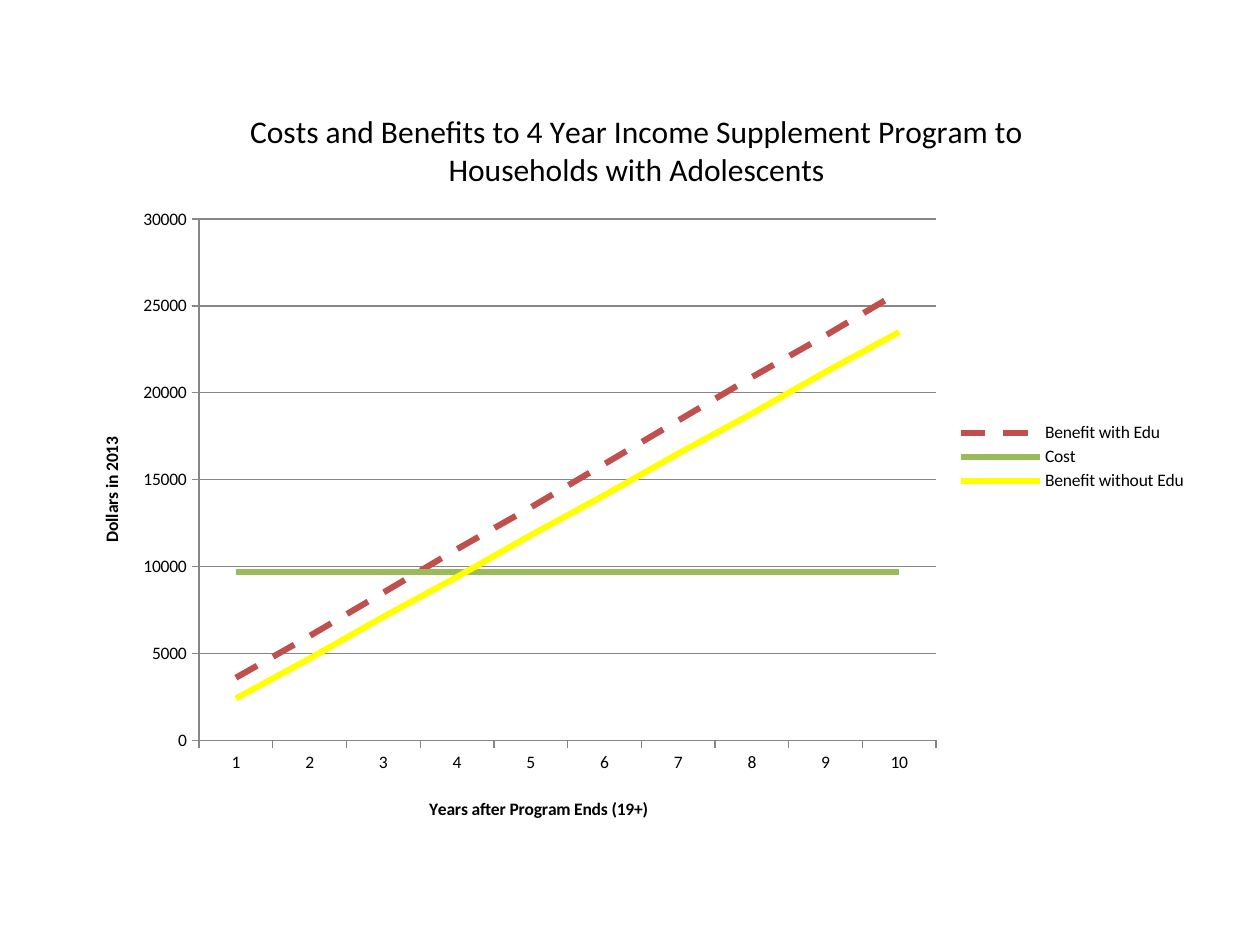
from lxml import etree
from pptx import Presentation
from pptx.chart.data import CategoryChartData
from pptx.dml.color import RGBColor
from pptx.enum.chart import XL_CHART_TYPE, XL_LEGEND_POSITION, XL_TICK_MARK
from pptx.enum.dml import MSO_LINE
from pptx.oxml.ns import qn
from pptx.util import Pt

LINE_CHART = XL_CHART_TYPE.LINE
LEGEND_RIGHT = XL_LEGEND_POSITION.RIGHT
TICK_OUTSIDE = XL_TICK_MARK.OUTSIDE
TICK_NONE = XL_TICK_MARK.NONE
DASH = MSO_LINE.DASH

FONT = "Calibri"
TITLE = "Costs and Benefits to 4 Year Income Supplement Program to Households with Adolescents"
CATEGORY_TITLE = "Years after Program Ends (19+)"
VALUE_TITLE = "Dollars in 2013"
YEARS = [str(year) for year in range(1, 11)]
SERIES = [
    ("Benefit with Edu", "C0504D", DASH,
     [3600, 6000, 8500, 11000, 13400, 15900, 18400, 20900, 23300, 25800]),
    ("Cost", "9BBB59", None, [9700] * len(YEARS)),
    ("Benefit without Edu", "FFFF00", None,
     [2400, 4700, 7100, 9400, 11800, 14100, 16500, 18800, 21200, 23500]),
]


def color(hex_value):
    return RGBColor.from_string(hex_value)


def format_font(font, size, bold=False):
    font.name = FONT
    font.size = Pt(size)
    font.bold = bold
    font.color.rgb = color("000000")


def format_line(line, hex_value, width):
    line.color.rgb = color(hex_value)
    line.width = Pt(width)


def set_title(owner, text, size, bold):
    frame = (owner.chart_title if hasattr(owner, "chart_title") else owner.axis_title).text_frame
    frame.text = text
    format_font(frame.paragraphs[0].font, size, bold)


def place(element, following, left, top, width=None, height=None, inner=False):
    for old in element.findall(qn("c:layout")):
        element.remove(old)
    layout = etree.Element(qn("c:layout"))
    manual = etree.SubElement(layout, qn("c:manualLayout"))
    settings = [("layoutTarget", "inner")] if inner else []
    settings += [("xMode", "edge"), ("yMode", "edge"), ("x", left), ("y", top)]
    if width:
        settings += [("w", width), ("h", height)]
    for name, value in settings:
        etree.SubElement(manual, qn("c:" + name)).set("val", str(value))
    next(child for child in element if child.tag in map(qn, following)).addprevious(layout)


presentation = Presentation()
presentation.slide_width = Pt(720)
presentation.slide_height = Pt(540)
slide = presentation.slides.add_slide(presentation.slide_layouts[6])

chart_data = CategoryChartData()
chart_data.categories = YEARS
for name, _, _, values in SERIES:
    chart_data.add_series(name, values)
chart = slide.shapes.add_chart(LINE_CHART, Pt(36), Pt(42), Pt(648), Pt(438), chart_data).chart
format_font(chart.font, 10)
chart.plots[0].vary_by_categories = False

for series, (_, hex_value, dash, _) in zip(chart.plots[0].series, SERIES):
    series.smooth = False
    format_line(series.format.line, hex_value, 3.5)
    if dash:
        series.format.line.dash_style = dash

set_title(chart, TITLE, 18, False)
for axis, text in ((chart.category_axis, CATEGORY_TITLE), (chart.value_axis, VALUE_TITLE)):
    set_title(axis, text, 10, True)
    axis.major_tick_mark = TICK_OUTSIDE
    axis.minor_tick_mark = TICK_NONE
    format_line(axis.format.line, "868686", 0.75)

value_axis = chart.value_axis
value_axis.minimum_scale = 0
value_axis.maximum_scale = 30000
value_axis.major_unit = 5000
value_axis.has_major_gridlines = True
format_line(value_axis.major_gridlines.format.line, "868686", 0.75)

chart.has_legend = True
chart.legend.position = LEGEND_RIGHT
chart.legend.include_in_layout = False
format_font(chart.legend.font, 10)

title_following = ("c:overlay", "c:spPr", "c:txPr")
title_places = (
    (chart.chart_title, 0.16, 0.04),
    (chart.category_axis.axis_title, 0.32, 0.94),
    (value_axis.axis_title, 0.03, 0.47),
)
for title, left, top in title_places:
    element = title._element
    if element.find(qn("c:overlay")) is None:
        overlay = etree.Element(qn("c:overlay"))
        overlay.set("val", "0")
        element.find(qn("c:tx")).addnext(overlay)
    place(element, title_following, left, top)
place(chart.legend._element, title_following, 0.79, 0.45, 0.2, 0.1)
plot_area = chart.plots[0]._element.getparent()
place(plot_area, ("c:lineChart",), 0.12, 0.19, 0.65, 0.68, inner=True)

presentation.save("out.pptx")
